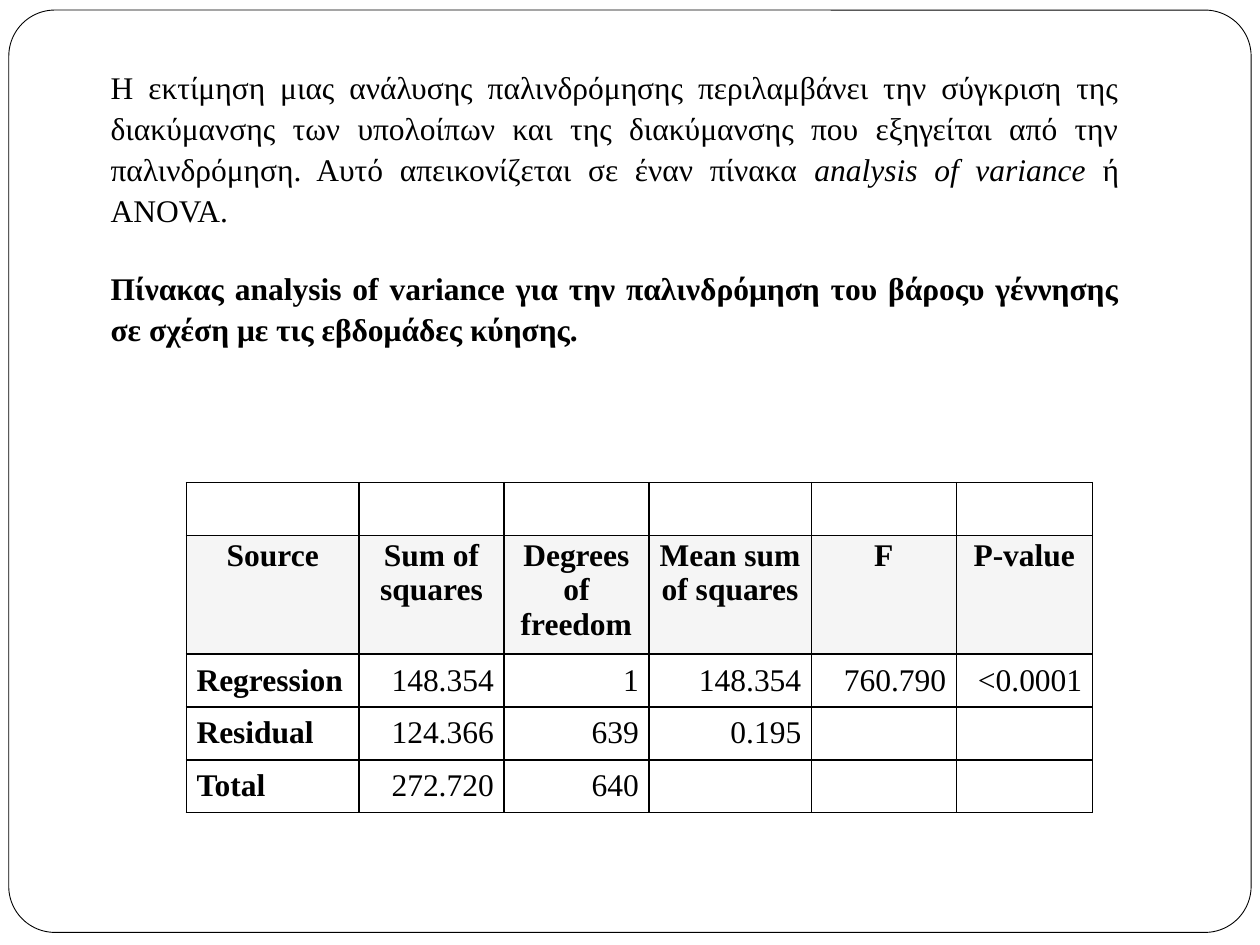
from dataclasses import dataclass

from lxml.etree import SubElement
from pptx import Presentation
from pptx.dml.color import RGBColor as RGB
from pptx.enum.shapes import MSO_SHAPE as SHAPE
from pptx.enum.text import MSO_ANCHOR as ANCHOR, PP_ALIGN as ALIGN
from pptx.oxml.ns import qn
from pptx.util import Inches, Pt


@dataclass(frozen=True)
class Theme:
    font: str = "Times New Roman"
    size: float = 18
    text: str = "000000"
    paper: str = "FFFFFF"
    header: str = "F5F5F5"
    frame_width: float = 0.5
    border_width: float = 1


THEME = Theme()

INTRO = [
    ("Η εκτίμηση μιας ανάλυσης παλινδρόμησης περιλαμβάνει την σύγκριση της "
     "διακύμανσης των υπολοίπων και της διακύμανσης που εξηγείται από την "
     "παλινδρόμηση. Αυτό απεικονίζεται σε έναν πίνακα ", {}),
    ("analysis of variance ", {"italic": True}),
    ("ή ANOVA.", {}),
]
CAPTION = [
    ("Πίνακας analysis of variance για την παλινδρόμηση του βάροςυ γέννησης "
     "σε σχέση με τις εβδομάδες κύησης.", {"bold": True}),
]
ANOVA = [
    [""] * 6,
    ["Source", "Sum of squares", "Degrees of freedom",
     "Mean sum of squares", "F", "P-value"],
    ["Regression", "148.354", "1", "148.354", "760.790", "<0.0001"],
    ["Residual", "124.366", "639", "0.195", "", ""],
    ["Total", "272.720", "640", "", "", ""],
]
COL_WIDTHS = [1.37, 1.15, 1.15, 1.29, 1.15, 1.08]
ROW_HEIGHTS = [0.4, 0.94, 0.42, 0.42, 0.42]


def add_run(p, text, bold=False, italic=False):
    r = p.add_run()
    r.text = text
    r.font.name = THEME.font
    r.font.size = Pt(THEME.size)
    r.font.bold = bold
    r.font.italic = italic
    r.font.color.rgb = RGB.from_string(THEME.text)


def add_frame(s):
    sp = s.shapes.add_shape(SHAPE.ROUNDED_RECTANGLE, Inches(0.07), Inches(0.08),
                            Inches(9.86), Inches(7.32))
    sp.adjustments[0] = 0.05
    sp.shadow.inherit = False
    sp.fill.solid()
    sp.fill.fore_color.rgb = RGB.from_string(THEME.paper)
    sp.line.color.rgb = RGB.from_string(THEME.text)
    sp.line.width = Pt(THEME.frame_width)


def add_text(s, paragraphs):
    sp = s.shapes.add_textbox(Inches(0.78), Inches(0.47), Inches(8.2), Inches(2.22))
    tf = sp.text_frame
    tf.word_wrap = True
    for i, runs in enumerate(paragraphs):
        p = tf.add_paragraph() if i else tf.paragraphs[0]
        p.alignment = ALIGN.JUSTIFY
        p.line_spacing = 1.08
        if i:
            p.space_before = Pt(21.5)
        for text, style in runs:
            add_run(p, text, **style)


def set_borders(cell):
    tc_pr = cell._tc.get_or_add_tcPr()
    for i, side in enumerate(("lnL", "lnR", "lnT", "lnB")):
        ln = tc_pr.makeelement(qn(f"a:{side}"), w=str(Pt(THEME.border_width)))
        fill = SubElement(ln, qn("a:solidFill"))
        SubElement(fill, qn("a:srgbClr"), val=THEME.text)
        tc_pr.insert(i, ln)


def fill_cell(cell, text, row, col):
    is_header = row == 1
    cell.fill.solid()
    cell.fill.fore_color.rgb = RGB.from_string(THEME.header if is_header else THEME.paper)
    set_borders(cell)
    side, edge = (0.02, 0.02) if is_header else (0.08, 0.06)
    cell.margin_left = cell.margin_right = Inches(side)
    cell.margin_top = cell.margin_bottom = Inches(edge)
    cell.vertical_anchor = ANCHOR.TOP if is_header else ANCHOR.MIDDLE
    p = cell.text_frame.paragraphs[0]
    p.font.size = Pt(THEME.size)
    if is_header:
        p.alignment = ALIGN.CENTER
    else:
        p.alignment = ALIGN.RIGHT if col else ALIGN.LEFT
    if text:
        add_run(p, text, bold=is_header or col == 0)


def add_anova_table(s):
    shape = s.shapes.add_table(len(ROW_HEIGHTS), len(COL_WIDTHS), Inches(1.48), Inches(3.83),
                               Inches(sum(COL_WIDTHS)), Inches(sum(ROW_HEIGHTS)))
    table = shape.table
    table.first_row = table.horz_banding = False
    for column, width in zip(table.columns, COL_WIDTHS):
        column.width = Inches(width)
    for row, height in zip(table.rows, ROW_HEIGHTS):
        row.height = Inches(height)
    for i, values in enumerate(ANOVA):
        for j, text in enumerate(values):
            fill_cell(table.cell(i, j), text, i, j)


def main():
    prs = Presentation()
    prs.slide_width, prs.slide_height = Inches(10), Inches(7.5)
    s = prs.slides.add_slide(prs.slide_layouts[6])
    add_frame(s)
    add_text(s, [INTRO, CAPTION])
    add_anova_table(s)
    prs.save("out.pptx")


if __name__ == "__main__":
    main()
